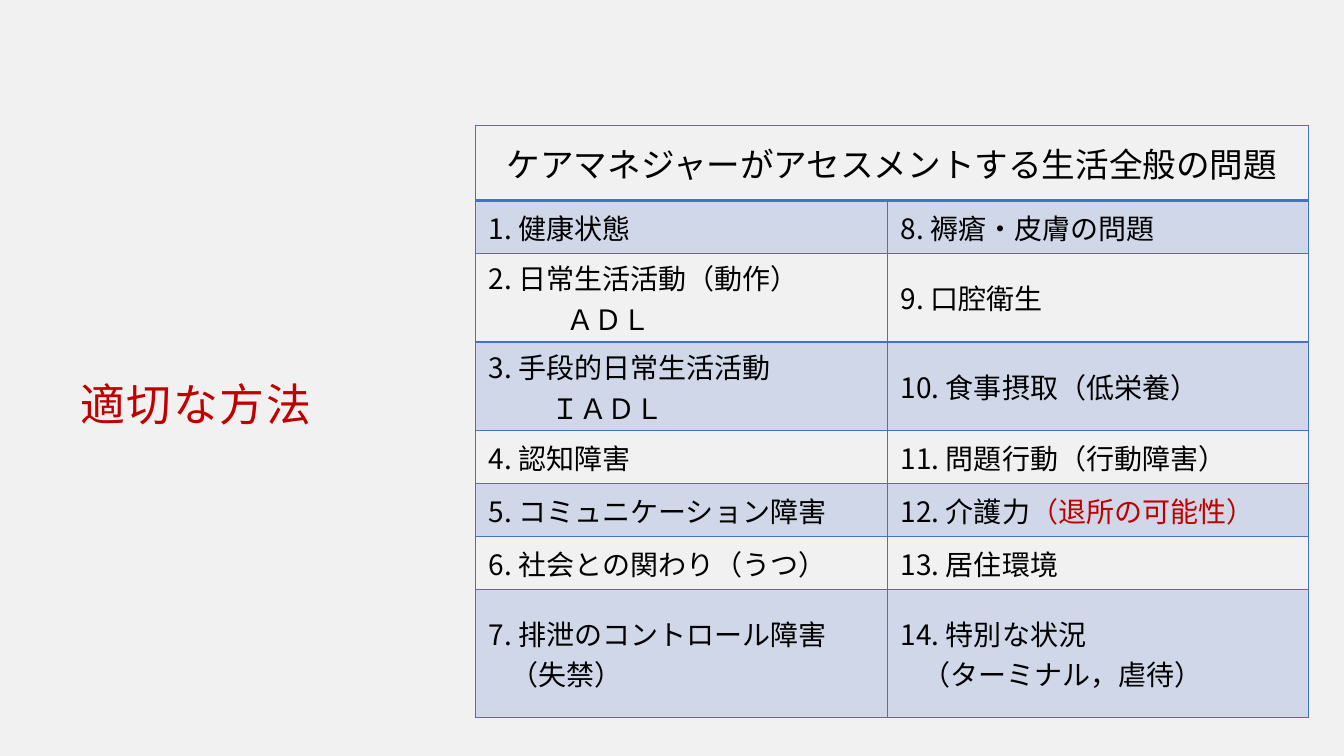
from dataclasses import dataclass

from lxml.etree import SubElement
from pptx import Presentation
from pptx.dml.color import RGBColor
from pptx.enum.text import MSO_ANCHOR, PP_ALIGN
from pptx.oxml import parse_xml
from pptx.oxml.ns import nsdecls, qn
from pptx.util import Pt


@dataclass(frozen=True)
class Theme:
    font: str = "Noto Sans CJK JP"
    back: str = "F2F1F1"
    ink: str = "000000"
    red: str = "C00000"
    blue: str = "4472C4"
    tint: int = 20
    title: float = 32
    head: float = 24
    body: float = 20


@dataclass(frozen=True)
class Item:
    text: str
    more: str = ""
    indent: float = 0
    note: str = ""


THEME = Theme()
NO_STYLE = "{2D5ABB26-0587-4C30-8999-92F81FD0307C}"
LEAD = 4.5
HEAD = "ケアマネジャーがアセスメントする生活全般の問題"
ROWS = [
    (Item("1. 健康状態"), Item("8. 褥瘡・皮膚の問題")),
    (Item("2. 日常生活活動（動作）", "ＡＤＬ", 60), Item("9. 口腔衛生")),
    (Item("3. 手段的日常生活活動", "ＩＡＤＬ", 49.5), Item("10. 食事摂取（低栄養）")),
    (Item("4. 認知障害"), Item("11. 問題行動（行動障害）")),
    (Item("5. コミュニケーション障害"), Item("12. 介護力", note="（退所の可能性）")),
    (Item("6. 社会との関わり（うつ）"), Item("13. 居住環境")),
    (Item("7. 排泄のコントロール障害", "（失禁）", 20),
     Item("14. 特別な状況", "（ターミナル，虐待）", 20)),
]
WIDTHS = [294.4, 300.8]
ONE, TWO = 37.8, 63.4
HEIGHTS = [53.8, ONE, TWO, TWO, ONE, ONE, ONE, 91.2]


def write(para, text: str, size: float, tone: str, indent: float = 0) -> None:
    para.add_run().text = text
    font = para.font
    font.size = Pt(size)
    font.name = THEME.font
    font.color.rgb = RGBColor.from_string(tone)
    props = para._p.get_or_add_pPr()
    SubElement(props.find(qn("a:defRPr")), qn("a:ea"), typeface=THEME.font)
    if indent:
        props.set("marL", str(Pt(indent)))
        props.set("indent", "0")


def frame(cell, top: float, base: float) -> None:
    props = cell._tc.get_or_add_tcPr()
    sides = [("L", 1), ("R", 1), ("T", top), ("B", base)]
    for place, (side, width) in enumerate(sides):
        props.insert(place, parse_xml(
            f'<a:ln{side} {nsdecls("a")} w="{Pt(width)}"><a:solidFill>'
            f'<a:srgbClr val="{THEME.blue}"/></a:solidFill></a:ln{side}>'))


def style(cell, tint: bool, top: float = 1, base: float = 1) -> None:
    cell.vertical_anchor = MSO_ANCHOR.MIDDLE
    cell.margin_left = cell.margin_right = Pt(5)
    cell.margin_top = cell.margin_bottom = Pt(2.7)
    if tint:
        cell.fill.solid()
        cell.fill.fore_color.rgb = RGBColor.from_string(THEME.blue)
        tone = cell._tc.tcPr.find(qn("a:solidFill"))[0]
        SubElement(tone, qn("a:alpha"), val=str(THEME.tint * 1000))
    else:
        cell.fill.background()
    frame(cell, top, base)


def fill_cell(cell, item: Item) -> None:
    first = cell.text_frame.paragraphs[0]
    write(first, item.text, THEME.body, THEME.ink, LEAD)
    if item.note:
        run = first.add_run()
        run.text = item.note
        run.font.color.rgb = RGBColor.from_string(THEME.red)
    if item.more:
        write(cell.text_frame.add_paragraph(), item.more,
              THEME.body, THEME.ink, item.indent)


def add_title(slide) -> None:
    box = slide.shapes.add_textbox(Pt(50.4), Pt(244.6), Pt(281.5), Pt(87))
    text = box.text_frame
    text.word_wrap = True
    text.vertical_anchor = MSO_ANCHOR.MIDDLE
    para = text.paragraphs[0]
    write(para, "適切な方法", THEME.title, THEME.red)
    para.runs[0]._r.get_or_add_rPr().set("spc", "120")


def add_grid(slide) -> None:
    shape = slide.shapes.add_table(
        len(HEIGHTS), len(WIDTHS), Pt(339.5), Pt(89.4),
        Pt(sum(WIDTHS)), Pt(sum(HEIGHTS)))
    grid = shape.table
    grid.first_row = grid.horz_banding = False
    grid._tbl.tblPr.find(qn("a:tableStyleId")).text = NO_STYLE
    for col, width in zip(grid.columns, WIDTHS):
        col.width = Pt(width)
    for row, height in zip(grid.rows, HEIGHTS):
        row.height = Pt(height)

    head = grid.cell(0, 0)
    head.merge(grid.cell(0, 1))
    for cell in grid.rows[0].cells:
        style(cell, False, base=2)
    para = head.text_frame.paragraphs[0]
    write(para, HEAD, THEME.head, THEME.ink)
    para.alignment = PP_ALIGN.CENTER

    for line, pair in enumerate(ROWS, 1):
        for col, item in enumerate(pair):
            cell = grid.cell(line, col)
            style(cell, line % 2 == 1, top=2 if line == 1 else 1)
            fill_cell(cell, item)


def main() -> None:
    deck = Presentation()
    deck.slide_width, deck.slide_height = Pt(960), Pt(540)
    slide = deck.slides.add_slide(deck.slide_layouts[6])
    slide.background.fill.solid()
    slide.background.fill.fore_color.rgb = RGBColor.from_string(THEME.back)
    add_title(slide)
    add_grid(slide)
    deck.save("out.pptx")


if __name__ == "__main__":
    main()
